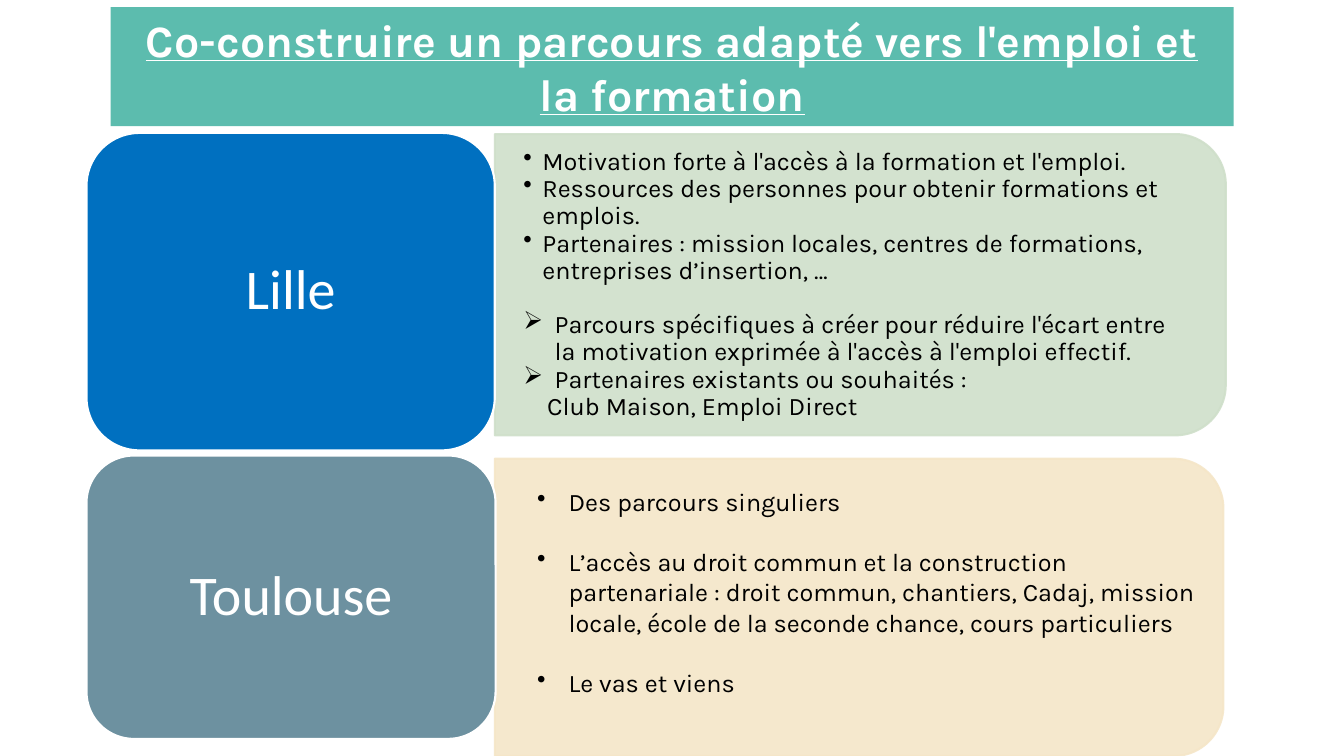
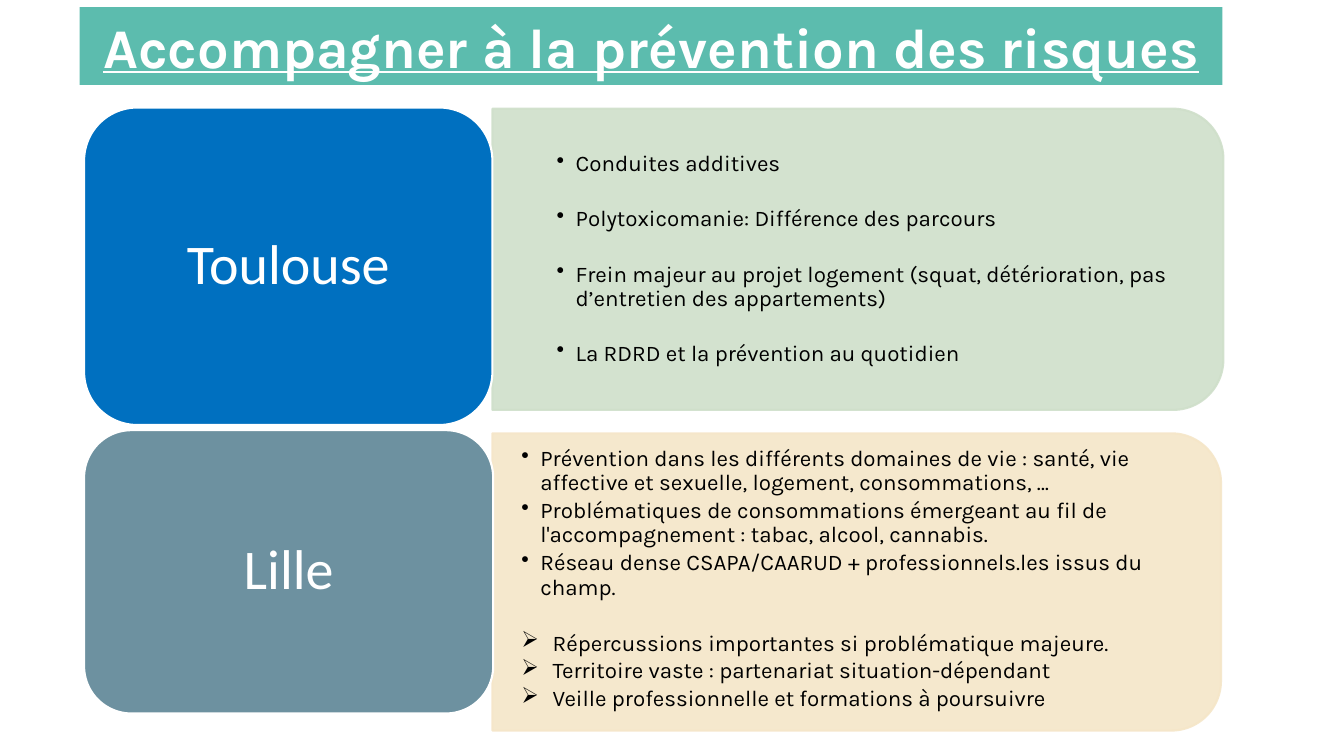
from dataclasses import dataclass

from lxml.etree import SubElement
from pptx import Presentation
from pptx.dml.color import RGBColor
from pptx.enum.shapes import MSO_SHAPE
from pptx.enum.text import MSO_ANCHOR, PP_ALIGN
from pptx.oxml.ns import qn
from pptx.util import Cm, Pt

HEX = {
    "teal": "5CBCAE",
    "blue": "0070C0",
    "slate": "6D91A0",
    "green": "CFDFCA",
    "sand": "F5E6C8",
    "white": "FFFFFF",
    "black": "000000",
}
SPLIT = 12.47  # where labels end and panels begin
ROUND = 0.167


@dataclass(frozen=True)
class Box:
    left: float
    top: float
    width: float
    height: float

    def shift(self, right: float, down: float) -> "Box":
        return Box(self.left + right, self.top + down, self.width, self.height)

    def place(self) -> tuple:
        return Cm(self.left), Cm(self.top), Cm(self.width), Cm(self.height)


@dataclass(frozen=True)
class Row:
    label: Box
    label_hue: str
    panel: Box
    panel_hue: str


@dataclass(frozen=True)
class Item:
    text: str
    bullet: str = "•"
    margin: float = 0.48
    before: float = 0


@dataclass(frozen=True)
class Body:
    city: str
    items: tuple
    size: int
    inset: float  # from the panel's left edge
    rise: float = 0
    line: float = 0.9


@dataclass(frozen=True)
class Page:
    title: str
    size: int
    band: Box
    shift: tuple
    bodies: tuple


ROWS = (
    Row(Box(2.18, 3.35, 10.29, 8), "blue", Box(SPLIT, 3.38, 18.42, 7.59), "green"),
    Row(Box(2.18, 11.48, 10.31, 7.14), "slate", Box(SPLIT, 11.56, 18.36, 7.49), "sand"),
)


def arrow(text: str, before: float = 0) -> Item:
    return Item(text, "➢", 0.79, before)


def wide(text: str, before: float = 21.6) -> Item:
    return Item(text, "•", 0.79, before)


PAGES = (
    Page(
        "Co-construire un parcours adapté vers l'emploi et la formation",
        32, Box(2.79, 0.18, 28.3, 3), (0, 0),
        (
            Body("Lille", (
                Item("Motivation forte à l'accès à la formation et l'emploi."),
                Item("Ressources des personnes pour obtenir formations et emplois."),
                Item("Partenaires : mission locales, centres de formations, "
                     "entreprises d’insertion, …"),
                arrow("Parcours spécifiques à créer pour réduire l'écart entre la "
                      "motivation exprimée à l'accès à l'emploi effectif.", 19.4),
                arrow("Partenaires existants ou souhaités :"),
                Item("Club Maison, Emploi Direct", "", 0.6),
            ), 18, 0.03),
            Body("Toulouse", (
                wide("Des parcours singuliers", 0),
                wide("L’accès au droit commun et la construction partenariale : "
                     "droit commun, chantiers, Cadaj, mission locale, école de la "
                     "seconde chance, cours particuliers"),
                wide("Le vas et viens"),
            ), 18, 0.38, 0.39, 1),
        ),
    ),
    Page(
        "Accompagner à la prévention des risques",
        40, Box(2.01, 0.18, 28.8, 1.96), (-0.06, -0.64),
        (
            Body("Toulouse", (
                Item("Conduites additives"),
                Item("Polytoxicomanie: Différence des parcours", before=22.1),
                Item("Frein majeur au projet logement (squat, détérioration, pas "
                     "d’entretien des appartements)", before=22.1),
                Item("La RDRD et la prévention au quotidien", before=22.1),
            ), 16, 0.93),
            Body("Lille", (
                Item("Prévention dans les différents domaines de vie : santé, vie "
                     "affective et sexuelle, logement, consommations, …"),
                Item("Problématiques de consommations émergeant au fil de "
                     "l'accompagnement : tabac, alcool, cannabis.", before=2.7),
                Item("Réseau dense CSAPA/CAARUD + professionnels.les issus du champ.",
                     before=2.7),
                arrow("Répercussions importantes si problématique majeure.", 22.7),
                arrow("Territoire vaste : partenariat situation-dépendant", 2.7),
                arrow("Veille professionnelle et formations à poursuivre", 2.7),
            ), 16, 0.04, 0.06),
        ),
    ),
)


def tint(name: str) -> RGBColor:
    return RGBColor.from_string(HEX[name])


def add_run(para, text: str, font: str, size: int, hue: str):
    run = para.add_run()
    run.text = text
    run.font.name = font
    run.font.size = Pt(size)
    run.font.color.rgb = tint(hue)
    return run


def add_form(slide, kind, box: Box, fill: str, line: str = ""):
    form = slide.shapes.add_shape(kind, *box.place())
    form.shadow.inherit = False
    form.fill.solid()
    form.fill.fore_color.rgb = tint(fill)
    if line:
        form.line.color.rgb = tint(line)
        form.line.width = Pt(1.5)
    else:
        form.line.fill.background()
    return form


def centre(form, text: str, font: str, size: int):
    frame = form.text_frame
    frame.word_wrap = True
    frame.vertical_anchor = MSO_ANCHOR.MIDDLE
    para = frame.paragraphs[0]
    para.alignment = PP_ALIGN.CENTER
    return add_run(para, text, font, size, "white")


def add_title(slide, page: Page) -> None:
    band = add_form(slide, MSO_SHAPE.RECTANGLE, page.band, "teal")
    run = centre(band, page.title, "Karla", page.size)
    run.font.bold = True
    run.font.underline = True


def add_panel(slide, box: Box, hue: str) -> None:
    """Draw a tab rounded on its right side: a tall shape turned by 90 degrees."""
    lean = (box.width - box.height) / 2
    tall = Box(box.left + lean, box.top - lean, box.height, box.width)
    form = add_form(slide, MSO_SHAPE.ROUND_2_SAME_RECTANGLE, tall, hue, hue)
    form.rotation = 90
    form.adjustments[0] = ROUND
    form.adjustments[1] = 0
    for shade in form.element.spPr.iter(qn("a:srgbClr")):
        SubElement(shade, qn("a:alpha")).set("val", "90000")


def add_label(slide, box: Box, hue: str, city: str) -> None:
    form = add_form(slide, MSO_SHAPE.ROUNDED_RECTANGLE, box, hue, "white")
    form.adjustments[0] = ROUND
    centre(form, city, "Calibri", 40)
    form.text_frame.paragraphs[0].line_spacing = 0.9


def add_item(para, item: Item, body: Body) -> None:
    para.line_spacing = body.line
    para.space_before = Pt(item.before)
    props = para._p.get_or_add_pPr()
    props.set("marL", str(Cm(item.margin)))
    if item.bullet:
        props.set("indent", str(-Cm(item.margin)))
        SubElement(props, qn("a:buChar")).set("char", item.bullet)
    add_run(para, item.text, "Karla", body.size, "black")


def add_body(slide, panel: Box, body: Body) -> None:
    spot = Box(panel.left + body.inset, panel.top - body.rise, 18.12, panel.height)
    frame = slide.shapes.add_textbox(*spot.place()).text_frame
    frame.word_wrap = True
    frame.vertical_anchor = MSO_ANCHOR.MIDDLE
    frame.margin_left = frame.margin_right = Cm(0.69)
    frame.margin_top = frame.margin_bottom = 0
    for rank, item in enumerate(body.items):
        para = frame.add_paragraph() if rank else frame.paragraphs[0]
        add_item(para, item, body)


def add_page(deck, page: Page) -> None:
    slide = deck.slides.add_slide(deck.slide_layouts[6])
    add_title(slide, page)
    for row, body in zip(ROWS, page.bodies):
        panel = row.panel.shift(*page.shift)
        add_panel(slide, panel, row.panel_hue)
        add_label(slide, row.label.shift(*page.shift), row.label_hue, body.city)
        add_body(slide, panel, body)


def main() -> None:
    deck = Presentation()
    deck.slide_width = Cm(33.87)
    deck.slide_height = Cm(19.05)
    for page in PAGES:
        add_page(deck, page)
    deck.save("out.pptx")


if __name__ == "__main__":
    main()
